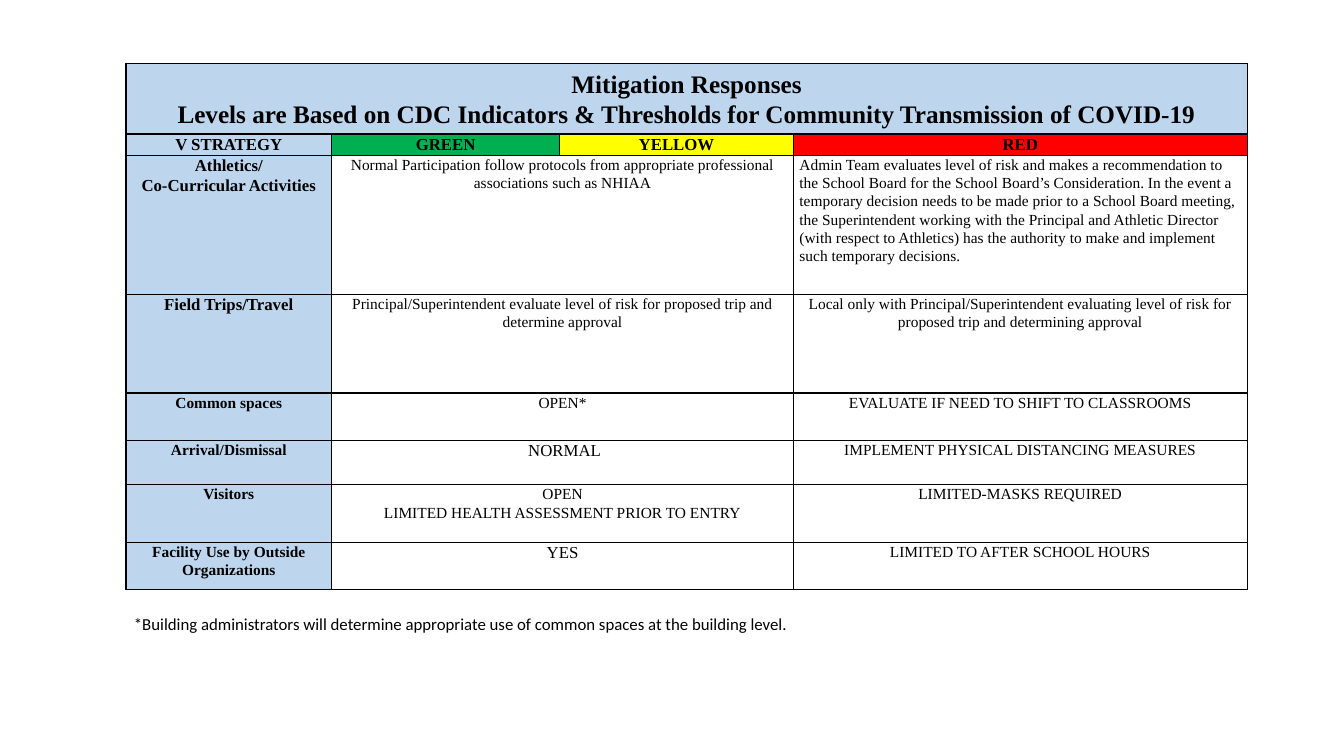
from lxml import etree
from pptx import Presentation
from pptx import util as u
from pptx.dml.color import RGBColor
from pptx.enum import text
from pptx.oxml import ns

HUES = {"ink": "000000", "blue": "BDD6EE", "green": "00B050",
        "yellow": "FFFF00", "red": "FF0000"}
TITLE = ("Mitigation Responses\nLevels are Based on CDC Indicators & Thresholds "
         "for Community Transmission of COVID-19")
HEADS = [("V STRATEGY", "blue"), ("GREEN", "green"), ("YELLOW", "yellow"), ("RED", "red")]
ROWS = [
    ("Athletics/\nCo-Curricular Activities", 12,
     "Normal Participation follow protocols from appropriate professional "
     "associations such as NHIAA", 11,
     "Admin Team evaluates level of risk and makes a recommendation to the School Board "
     "for the School Board’s Consideration. In the event a temporary decision needs to be "
     "made prior to a School Board meeting, the Superintendent working with the Principal "
     "and Athletic Director (with respect to Athletics) has the authority to make and "
     "implement such temporary decisions."),
    ("Field Trips/Travel", 12,
     "Principal/Superintendent evaluate level of risk for proposed trip and "
     "determine approval", 11,
     "Local only with Principal/Superintendent evaluating level of risk for proposed "
     "trip and determining approval"),
    ("Common spaces", 11, "OPEN*", 11, "EVALUATE IF NEED TO SHIFT TO CLASSROOMS"),
    ("Arrival/Dismissal", 11, " NORMAL", 12, "IMPLEMENT PHYSICAL DISTANCING MEASURES"),
    ("Visitors", 11, "OPEN\nLIMITED HEALTH ASSESSMENT PRIOR TO ENTRY", 11,
     "LIMITED-MASKS REQUIRED"),
    ("Facility Use by Outside Organizations", 11, "YES", 12,
     "LIMITED TO AFTER SCHOOL HOURS"),
]
NOTE = ("*Building administrators will determine appropriate use of common spaces "
        "at the building level.")
WIDTHS = [2.04, 2.26, 2.32, 4.5]
HEIGHTS = [0.7, 0.21, 1.38, 0.98, 0.47, 0.44, 0.57, 0.47]
ALIGN, ANCHOR = text.PP_ALIGN, text.MSO_ANCHOR


def assign(item, vals):
    for key, val in vals.items():
        setattr(item, key, val)


def write(frame, words, size, bold=False, face="Times New Roman", **form):
    frame.text = words
    for para in frame.paragraphs:
        assign(para, form)
        for run in para.runs:
            assign(run.font, {"size": u.Pt(size), "bold": bold, "name": face})
            run.font.color.rgb = RGBColor.from_string(HUES["ink"])


def edge(cell):
    props = cell._tc.get_or_add_tcPr()
    for side in ("lnL", "lnR", "lnT", "lnB"):
        line = etree.SubElement(props, ns.qn("a:" + side), w=str(u.Pt(1)))
        fill = etree.SubElement(line, ns.qn("a:solidFill"))
        etree.SubElement(fill, ns.qn("a:srgbClr"), val=HUES["ink"])


def put(cell, words, size, bold=False, hue=None, anchor=ANCHOR.TOP, align=ALIGN.CENTER):
    inset = u.Inches(0.06)
    assign(cell, {"margin_left": inset, "margin_right": inset, "margin_top": 0,
                  "margin_bottom": 0, "vertical_anchor": anchor})
    write(cell.text_frame, words, size, bold, alignment=align, line_spacing=1.07)
    if hue:
        cell.fill.solid()
        cell.fill.fore_color.rgb = RGBColor.from_string(HUES[hue])


def main():
    """Build the mitigation response slide."""
    deck = Presentation()
    assign(deck, {"slide_width": u.Inches(13.33), "slide_height": u.Inches(7.5)})
    slide = deck.slides.add_slide(deck.slide_layouts[6])
    box = [u.Inches(n) for n in (1.25, 0.63, sum(WIDTHS), sum(HEIGHTS))]
    grid = slide.shapes.add_table(len(HEIGHTS), len(WIDTHS), *box).table
    assign(grid, {"first_row": False, "horz_banding": False})
    for col, width in zip(grid.columns, WIDTHS):
        col.width = u.Inches(width)
    for row, height in zip(grid.rows, HEIGHTS):
        row.height = u.Inches(height)
    for cell in grid.iter_cells():
        edge(cell)
        cell.fill.background()

    grid.cell(0, 0).merge(grid.cell(0, 3))
    put(grid.cell(0, 0), TITLE, 18, True, "blue", ANCHOR.MIDDLE)
    for c, (head, hue) in enumerate(HEADS):
        put(grid.cell(1, c), head, 12, True, hue, ANCHOR.MIDDLE if c else ANCHOR.TOP)
    for r, (topic, big, calm, size, alert) in enumerate(ROWS, 2):
        grid.cell(r, 1).merge(grid.cell(r, 2))
        put(grid.cell(r, 0), topic, big, True, "blue")
        put(grid.cell(r, 1), calm, size)
        put(grid.cell(r, 3), alert, 11, align=ALIGN.LEFT if r == 2 else ALIGN.CENTER)

    note = slide.shapes.add_textbox(*[u.Inches(n) for n in (1.23, 6.04, 11.06, 0.3)])
    assign(note.text_frame, {"word_wrap": True,
                             "auto_size": text.MSO_AUTO_SIZE.SHAPE_TO_FIT_TEXT})
    write(note.text_frame, NOTE, 12, face="Calibri")
    deck.save("out.pptx")


if __name__ == "__main__":
    main()
